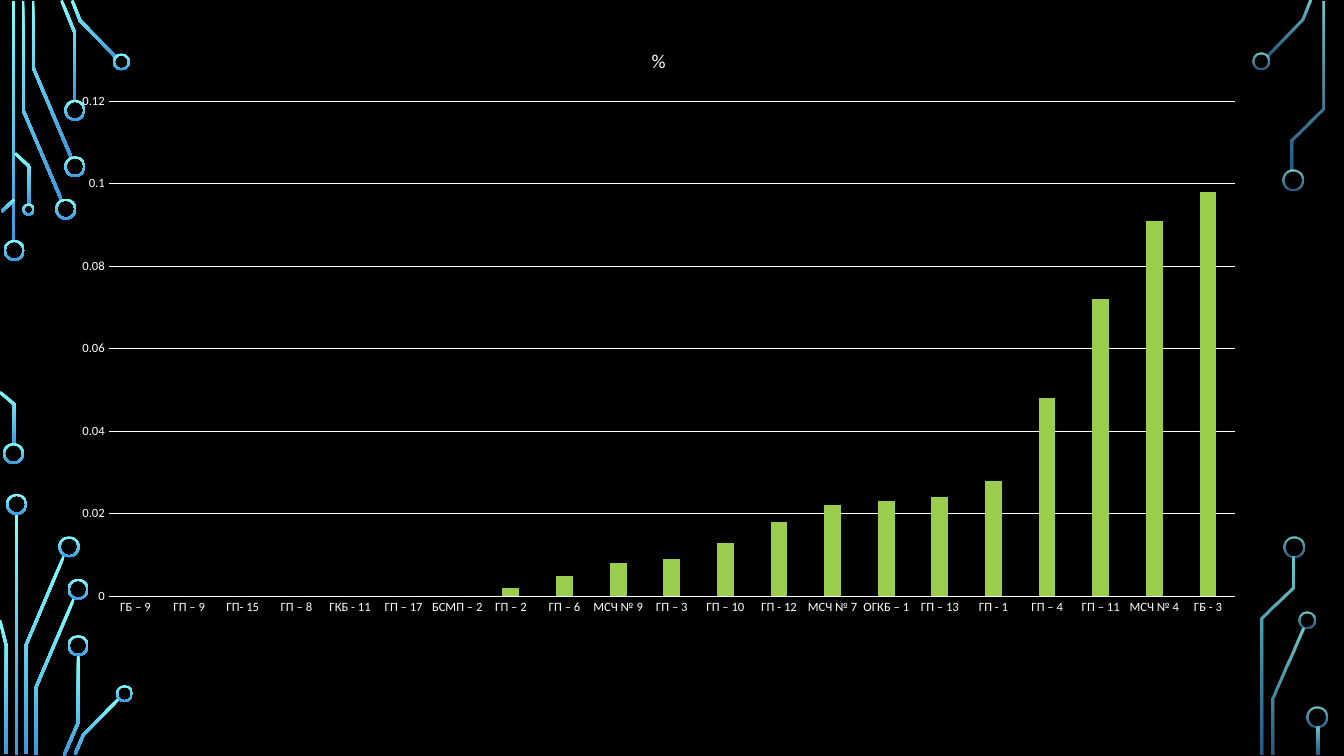
from math import hypot

from lxml import etree
from pptx import Presentation
from pptx.chart.data import CategoryChartData
from pptx.dml.color import RGBColor
from pptx.enum.chart import XL_CHART_TYPE, XL_TICK_MARK
from pptx.enum.shapes import MSO_SHAPE
from pptx.oxml import parse_xml
from pptx.oxml.ns import nsdecls, qn
from pptx.util import Cm, Pt

COLUMN = XL_CHART_TYPE.COLUMN_CLUSTERED
NO_TICK = XL_TICK_MARK.NONE
DONUT = MSO_SHAPE.DONUT

FONT = "Calibri"
COLORS = {
    "background": "000000",
    "text": "FFFFFF",
    "bar": "9ACD4C",
    "glow_top": "82FFFF",
    "glow_bottom": "3D97DE",
}
TRACE_WIDTH = 0.07
RING_BAND = 0.05
LARGE, MEDIUM, SMALL = 0.53, 0.43, 0.31  # ring diameters

# Circuit traces as centre lines, in cm
LEFT_TRACES = [
    [(0.34, 0.03), (0.34, 6.1)],
    [(0.58, 0.03), (0.58, 2.77), (1.55, 5.04)],
    [(0.83, 0.03), (0.83, 1.69), (1.8, 3.98)],
    [(1.55, 0.01), (1.89, 0.84), (1.89, 2.54)],
    [(1.82, 0.01), (2.02, 0.52), (2.93, 1.45)],
    [(0.04, 5.33), (0.36, 5.03)],
    [(0, 9.88), (0.36, 10.19), (0.36, 11.2)],
    [(0.38, 3.86), (0.74, 4.2), (0.74, 5.16)],
    [(0.42, 12.95), (0.42, 19.02)],
    [(0.65, 19), (0.65, 16.27), (1.61, 14.01)],
    [(0, 15.63), (0.16, 16.28), (0.16, 19)],
    [(0.9, 19.02), (0.9, 17.34), (1.87, 15.07)],
    [(1.61, 19.04), (1.97, 18.21), (1.97, 16.51)],
    [(1.89, 19.01), (2.1, 18.52), (3, 17.6)],
]
RIGHT_TRACES = [
    [(31.93, 1.41), (32.83, 0.5), (33.03, 0.01)],
    [(32.07, 19.02), (32.07, 17.61), (32.84, 15.84)],
    [(32.56, 4.29), (32.56, 3.52), (33.34, 2.73), (33.34, 0.03)],
    [(31.81, 19.02), (31.81, 15.58), (32.6, 14.81), (32.6, 14.02)],
    [(33.21, 18.31), (33.21, 19.02)],
]

# Ring ends: centre x, centre y, diameter
LEFT_RINGS = [
    (0.36, 6.31, LARGE), (0.34, 11.43, LARGE), (1.66, 5.27, LARGE),
    (1.89, 4.2, LARGE), (1.89, 2.78, LARGE), (3.06, 1.56, MEDIUM),
    (0.72, 5.28, SMALL), (0.42, 12.71, LARGE), (1.74, 13.78, LARGE),
    (1.97, 14.85, LARGE), (1.97, 16.27, LARGE), (3.14, 17.48, MEDIUM),
]
RIGHT_RINGS = [
    (31.79, 1.54, MEDIUM), (32.58, 4.53, LARGE), (32.93, 15.63, MEDIUM),
    (32.6, 13.78, LARGE), (33.18, 18.08, LARGE),
]

SHARES = {
    "ГБ – 9": 0, "ГП – 9": 0, "ГП- 15": 0, "ГП – 8": 0, "ГКБ - 11": 0,
    "ГП – 17": 0, "БСМП – 2": 0, "ГП – 2": 0.002, "ГП – 6": 0.005,
    "МСЧ № 9": 0.008, "ГП – 3": 0.009, "ГП – 10": 0.013, "ГП - 12": 0.018,
    "МСЧ № 7": 0.022, "ОГКБ – 1": 0.023, "ГП – 13": 0.024, "ГП - 1": 0.028,
    "ГП – 4": 0.048, "ГП – 11": 0.072, "МСЧ № 4": 0.091, "ГБ - 3": 0.098,
}


def rgb(name):
    return RGBColor.from_string(COLORS[name])


def style_glow(shape, opacities):
    """Vertical gradient fill, with an opacity in percent for each stop."""
    shape.shadow.inherit = False
    shape.line.fill.background()
    shape.fill.gradient()
    shape.fill.gradient_angle = 270
    for stop, name in zip(shape.fill.gradient_stops, ("glow_top", "glow_bottom")):
        stop.color.rgb = rgb(name)
    for color, opacity in zip(shape.element.iter(qn("a:srgbClr")), opacities):
        if opacity < 100:
            etree.SubElement(color, qn("a:alpha"), val=str(opacity * 1000))


def trace_outline(points):
    """Widen a centre line into a closed outline with mitred corners."""
    normals = []
    for (x1, y1), (x2, y2) in zip(points, points[1:]):
        length = hypot(x2 - x1, y2 - y1)
        normals.append(((y1 - y2) / length, (x2 - x1) / length))
    before, after = normals[:1] + normals, normals + normals[-1:]
    one_side, other_side = [], []
    for (x, y), (ax, ay), (bx, by) in zip(points, before, after):
        reach = TRACE_WIDTH / 2 / (1 + ax * bx + ay * by)
        dx, dy = (ax + bx) * reach, (ay + by) * reach
        one_side.append((Cm(x + dx), Cm(y + dy)))
        other_side.append((Cm(x - dx), Cm(y - dy)))
    return one_side + other_side[::-1]


def add_trace(slide, points, opacities):
    outline = trace_outline(points)
    builder = slide.shapes.build_freeform(*outline[0])
    builder.add_line_segments(outline[1:], close=True)
    style_glow(builder.convert_to_shape(), opacities)


def add_ring(slide, center_x, center_y, diameter, opacities):
    shape = slide.shapes.add_shape(
        DONUT, Cm(center_x - diameter / 2), Cm(center_y - diameter / 2),
        Cm(diameter), Cm(diameter))
    shape.adjustments[0] = RING_BAND / diameter
    style_glow(shape, opacities)


def add_circuit(slide, traces, rings, opacities):
    for points in traces:
        add_trace(slide, points, opacities)
    for ring in rings:
        add_ring(slide, *ring, opacities)


def style_font(font, size):
    font.name = FONT
    font.size = Pt(size)
    font.bold = False
    font.color.rgb = rgb("text")


def style_line(line):
    line.color.rgb = rgb("text")
    line.width = Pt(0.75)


def set_plot_area(chart, x, y, width, height):
    """Fix the inner plot area, in fractions of the chart."""
    plot_area = chart.element.find(".//" + qn("c:plotArea"))
    for layout in plot_area.findall(qn("c:layout")):
        plot_area.remove(layout)
    plot_area.insert(0, parse_xml(
        f'<c:layout {nsdecls("c")}><c:manualLayout><c:layoutTarget val="inner"/>'
        f'<c:xMode val="edge"/><c:yMode val="edge"/><c:x val="{x}"/><c:y val="{y}"/>'
        f'<c:w val="{width}"/><c:h val="{height}"/></c:manualLayout></c:layout>'))


def add_share_chart(slide):
    data = CategoryChartData()
    data.categories = list(SHARES)
    data.add_series("%", list(SHARES.values()))
    chart = slide.shapes.add_chart(
        COLUMN, Cm(1.6), Cm(0.64), Cm(30), Cm(16.48), data).chart
    style_font(chart.font, 10)
    chart.has_legend = False
    set_plot_area(chart, 0.038, 0.116, 0.946, 0.757)

    # Title
    chart.has_title = True
    title = chart.chart_title.text_frame
    title.text = "%"
    style_font(title.paragraphs[0].font, 14)

    # Axes
    for axis in (chart.category_axis, chart.value_axis):
        axis.major_tick_mark = axis.minor_tick_mark = NO_TICK
        style_font(axis.tick_labels.font, 9)
    style_line(chart.category_axis.format.line)
    values = chart.value_axis
    values.minimum_scale, values.maximum_scale, values.major_unit = 0, 0.12, 0.02
    values.format.line.fill.background()
    style_line(values.major_gridlines.format.line)

    # Columns
    plot = chart.plots[0]
    plot.vary_by_categories = False
    plot.gap_width = 219
    plot.overlap = -27
    fill = plot.series[0].format.fill
    fill.solid()
    fill.fore_color.rgb = rgb("bar")


def main():
    presentation = Presentation()
    presentation.slide_width, presentation.slide_height = Cm(33.87), Cm(19.05)
    slide = presentation.slides.add_slide(presentation.slide_layouts[6])
    slide.background.fill.solid()
    slide.background.fill.fore_color.rgb = rgb("background")
    add_circuit(slide, LEFT_TRACES, LEFT_RINGS, (100, 100))
    add_circuit(slide, RIGHT_TRACES, RIGHT_RINGS, (80, 60))
    add_share_chart(slide)
    presentation.save("out.pptx")


if __name__ == "__main__":
    main()
